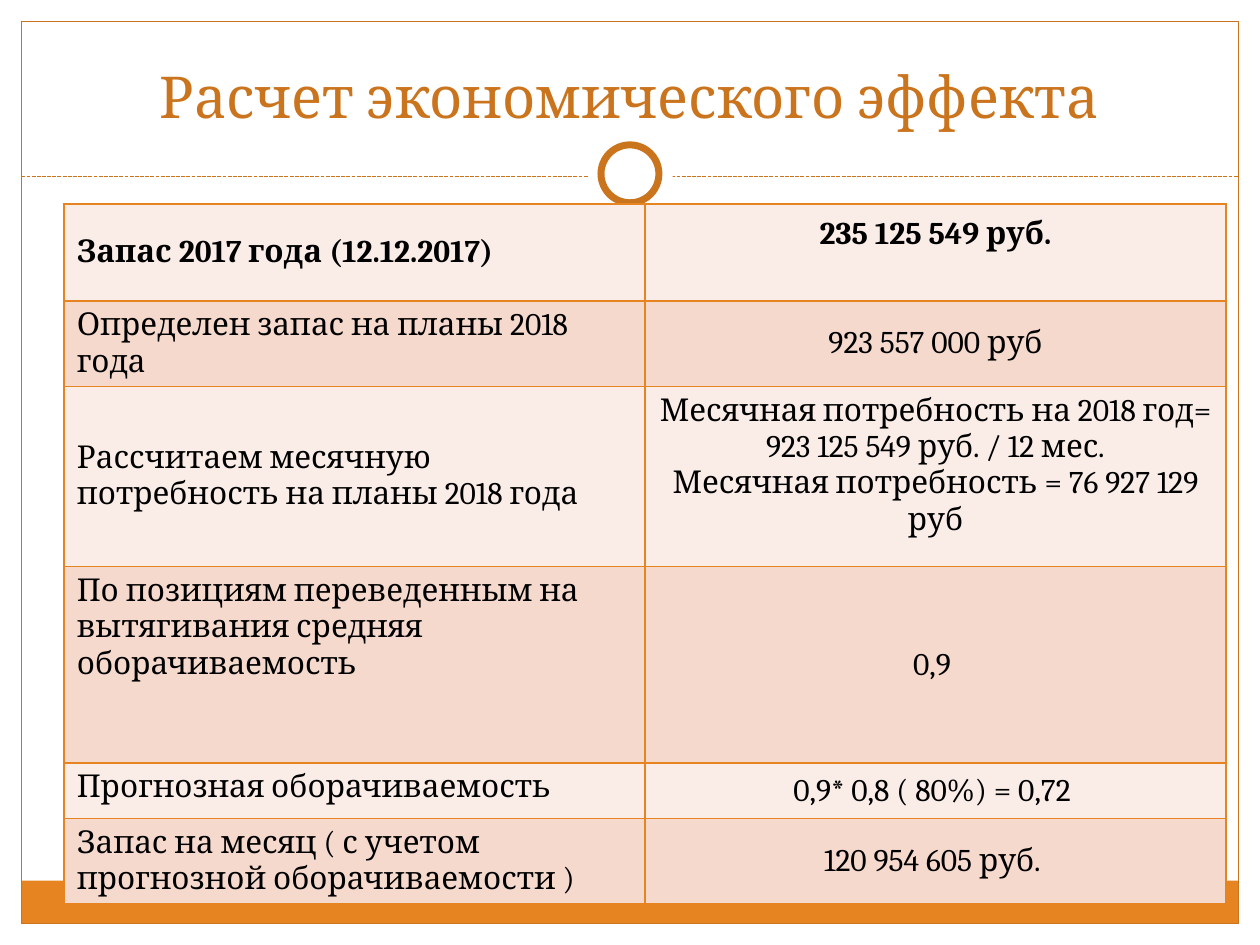
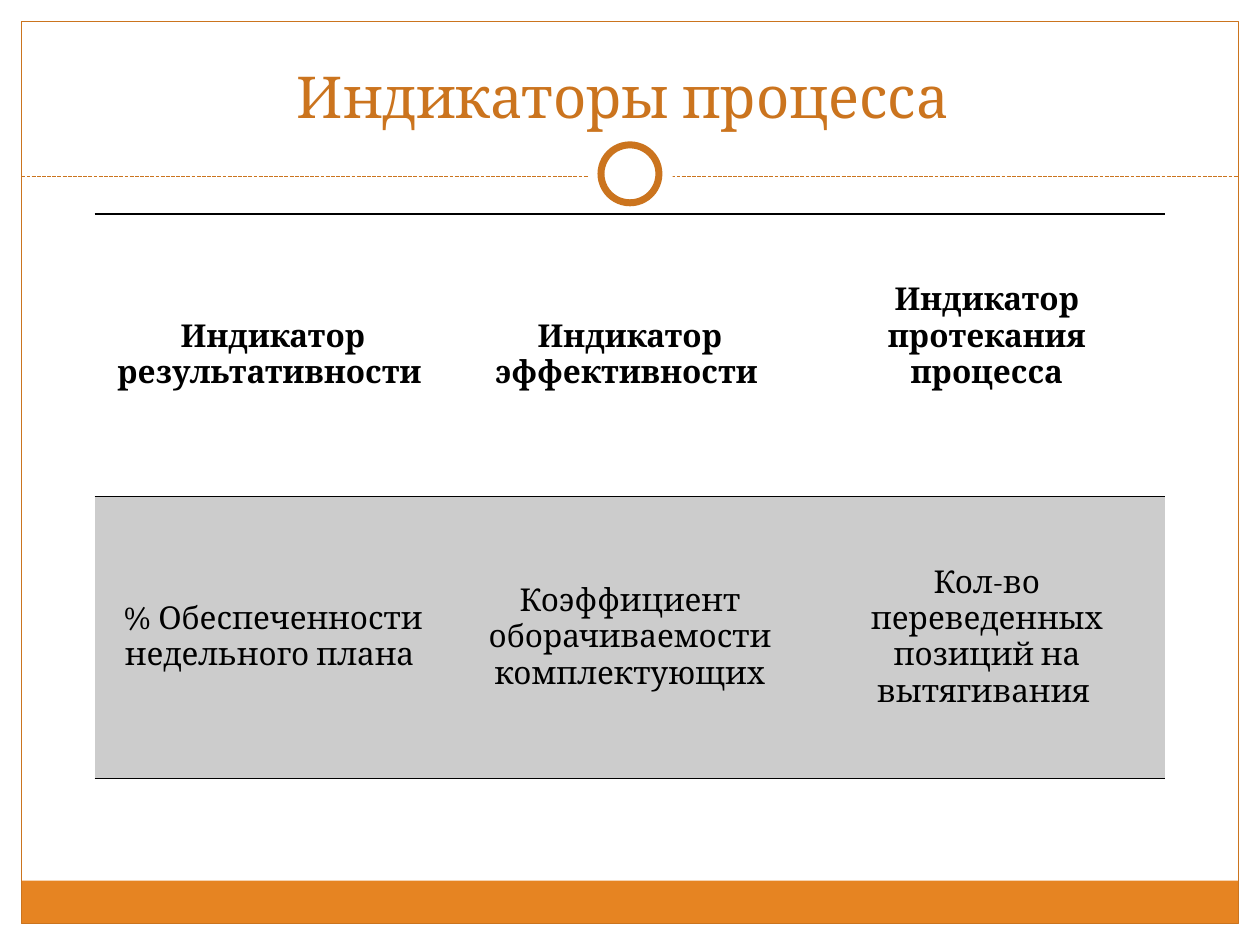
import pptx
import pptx.util
import pptx.dml.color
import pptx.enum.dml
import pptx.enum.shapes
import pptx.enum.text
import pptx.oxml
import pptx.oxml.ns
import lxml.etree

Inches = pptx.util.Inches
Pt = pptx.util.Pt
RGBColor = pptx.dml.color.RGBColor
Shape = pptx.enum.shapes.MSO_SHAPE
Align = pptx.enum.text.PP_ALIGN
Anchor = pptx.enum.text.MSO_ANCHOR
qn = pptx.oxml.ns.qn

ORANGE = RGBColor(0xE6, 0x84, 0x22)
RUST = RGBColor(0xCB, 0x74, 0x1E)
PALE = RGBColor(0xFA, 0xED, 0xE8)
PEACH = RGBColor(0xF5, 0xD9, 0xCD)
GREY = RGBColor(0xCC, 0xCC, 0xCC)
WHITE = RGBColor(0xFF, 0xFF, 0xFF)
BLACK = RGBColor(0, 0, 0)

FONT = "Cambria"
PLAIN = "{2D5ABB26-0587-4C30-8999-92F81FD0307C}"  # no style, no grid
EDGE = 0.17
LINE = 0.29  # height of one text line


class Deck:
    def __init__(self):
        self.prs = pptx.Presentation()
        self.prs.slide_width = Inches(10)
        self.prs.slide_height = Inches(7.5)
        self.slide = None

    def start(self, title):
        self.slide = self.prs.slides.add_slide(self.prs.slide_layouts[5])
        self.frame()
        self.title(title)

    def shape(self, kind, left, top, width, height, fill=None, line=None, size=0.75):
        item = self.slide.shapes.add_shape(
            kind, Inches(left), Inches(top), Inches(width), Inches(height))
        item.shadow.inherit = False
        if fill is None:
            item.fill.background()
        else:
            item.fill.solid()
            item.fill.fore_color.rgb = fill
        if line is None:
            item.line.fill.background()
        else:
            item.line.color.rgb = line
            item.line.width = Pt(size)

    def rule(self, left, right, top):
        line = self.slide.shapes.add_connector(
            pptx.enum.shapes.MSO_CONNECTOR.STRAIGHT,
            Inches(left), Inches(top), Inches(right), Inches(top))
        line.line.color.rgb = RUST
        line.line.width = Pt(0.75)
        line.line.dash_style = pptx.enum.dml.MSO_LINE.SQUARE_DOT
        lxml.etree.SubElement(line._element.spPr, qn("a:effectLst"))

    def frame(self):
        # Bottom band, border, dashed rule and ring
        wide = 10 - 2 * EDGE
        self.shape(Shape.RECTANGLE, EDGE, 6.99, wide, 0.34, ORANGE)
        self.shape(Shape.RECTANGLE, EDGE, EDGE, wide, 7.16, None, RUST)
        self.rule(EDGE, 10 - EDGE, 1.4)
        self.shape(Shape.OVAL, 4.67, 1.05, 0.67, 0.67, WHITE)
        self.shape(Shape.OVAL, 4.77, 1.15, 0.46, 0.46, WHITE, RUST, 4)

    def title(self, text):
        item = self.slide.shapes.title
        item.left, item.top = Inches(0.33), Inches(0.25)
        item.width, item.height = Inches(9.33), Inches(0.83)
        box = item.text_frame
        box.text = text
        box.word_wrap = True
        box.auto_size = pptx.enum.text.MSO_AUTO_SIZE.NONE
        box.vertical_anchor = Anchor.BOTTOM
        self.style(box.paragraphs[0], 33, RUST, Align.CENTER)
        # Bring the title in front of the frame
        self.slide.shapes._spTree.append(item._element)

    def style(self, para, size, color, align, bold=False):
        para.alignment = align
        para.font.name = FONT
        para.font.size = Pt(size)
        para.font.color.rgb = color
        para.font.bold = bold

    def table(self, left, top, width, rows, cols):
        item = self.slide.shapes.add_table(
            len(rows), cols, Inches(left), Inches(top),
            Inches(width), Inches(sum(rows)))
        grid = item.table
        grid.first_row = grid.horz_banding = False
        grid._tbl.tblPr.find(qn("a:tableStyleId")).text = PLAIN
        for col in grid.columns:
            col.width = Inches(width / cols)
        for row, tall in zip(grid.rows, rows):
            row.height = Inches(tall)
        return grid

    def cell(self, cell, text, align, anchor, fill, sides, color, bold=False):
        cell.text = text
        cell.vertical_anchor = anchor
        for para in cell.text_frame.paragraphs:
            self.style(para, 18, BLACK, align, bold)
        if fill is None:
            cell.fill.background()
        else:
            cell.fill.solid()
            cell.fill.fore_color.rgb = fill
        for spot, side in enumerate(sides):
            edge = pptx.oxml.parse_xml(
                f'<a:ln{side} {pptx.oxml.ns.nsdecls("a")} w="12700"><a:solidFill>'
                f'<a:srgbClr val="{color}"/></a:solidFill></a:ln{side}>')
            cell._tc.get_or_add_tcPr().insert(spot, edge)


def effect(deck):
    deck.start("Расчет экономического эффекта")
    mid, top = Anchor.MIDDLE, Anchor.TOP
    # Row height, label and its anchor, value and its anchor
    rows = [
        (0.77, "Запас 2017 года (12.12.2017)", mid, "235 125 549 руб.", mid),
        (0.44, "Определен запас на планы 2018 года", top, "923 557 000 руб", mid),
        (1.43, "Рассчитаем месячную потребность на планы 2018 года", mid,
         "Месячная потребность на 2018 год= 923 125 549 руб. / 12 мес.\n"
         "Месячная потребность = 76 927 129 руб", top),
        (1.56, "По позициям переведенным на вытягивания средняя оборачиваемость",
         top, "0,9 ", mid),
        (0.44, "Прогнозная оборачиваемость", top, "0,9* 0,8 ( 80%) = 0,72 ", mid),
        (0.44, "Запас на месяц ( с учетом прогнозной оборачиваемости )", top,
         "120 954 605 руб. ", mid),
    ]
    grid = deck.table(0.51, 1.62, 9.22, [row[0] for row in rows], 2)
    for num, (_, label, high, value, low) in enumerate(rows):
        look = (PEACH if num % 2 else PALE, "LRTB", ORANGE, num == 0)
        deck.cell(grid.cell(num, 0), label, Align.LEFT, high, *look)
        deck.cell(grid.cell(num, 1), value, Align.CENTER, low, *look)
    grid.cell(0, 1).margin_bottom = Inches(0.05 + LINE)


def signs(deck):
    deck.start("Индикаторы процесса ")
    cols = [
        ("Индикатор результативности ", "% Обеспеченности недельного плана "),
        ("Индикатор эффективности ", "Коэффициент оборачиваемости комплектующих"),
        ("Индикатор протекания процесса",
         "Кол-во переведенных позиций на вытягивания "),
    ]
    grid = deck.table(0.75, 1.7, 8.5, [2.24, 2.24], len(cols))
    for col, texts in enumerate(cols):
        for row, text in enumerate(texts):
            deck.cell(grid.cell(row, col), text, Align.CENTER, Anchor.MIDDLE,
                      GREY if row else None, "TB", BLACK, row == 0)
    grid.cell(0, 2).margin_bottom = Inches(0.05 + LINE)


def main():
    deck = Deck()
    effect(deck)
    signs(deck)
    deck.prs.save("out.pptx")


if __name__ == "__main__":
    main()
